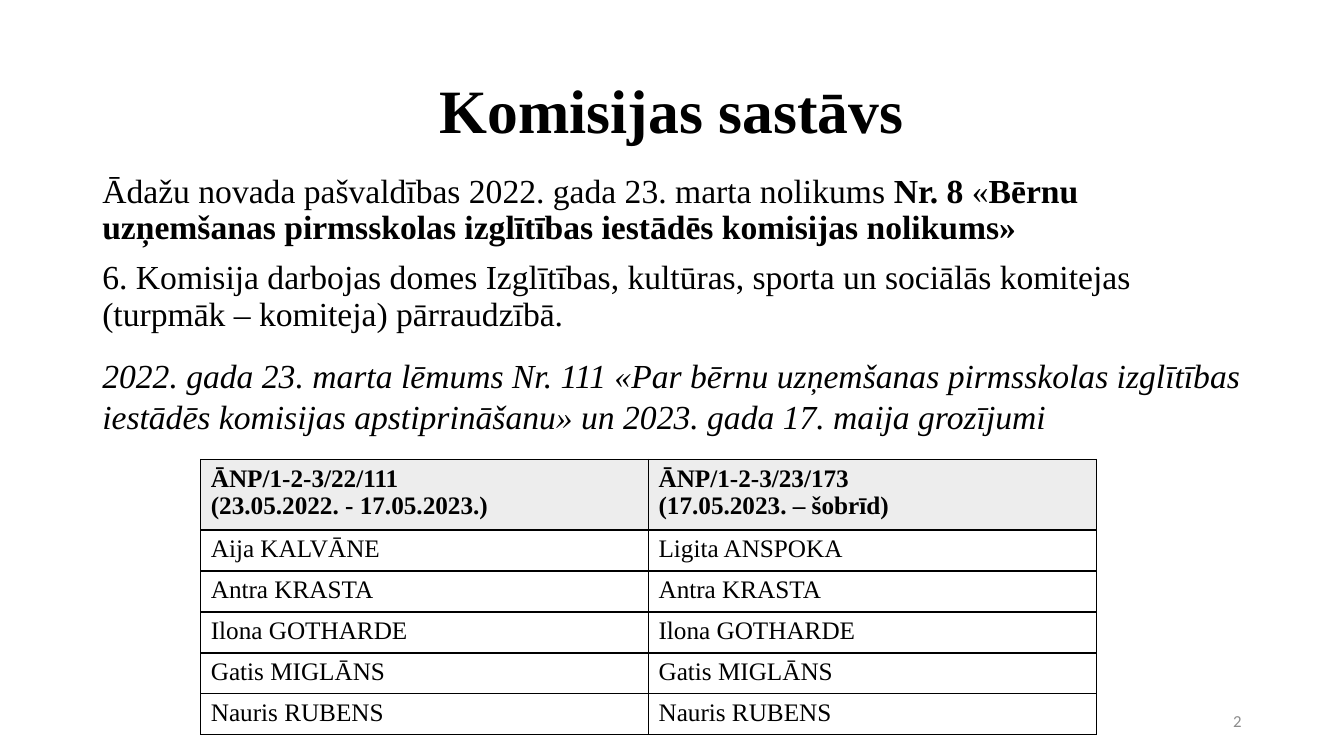
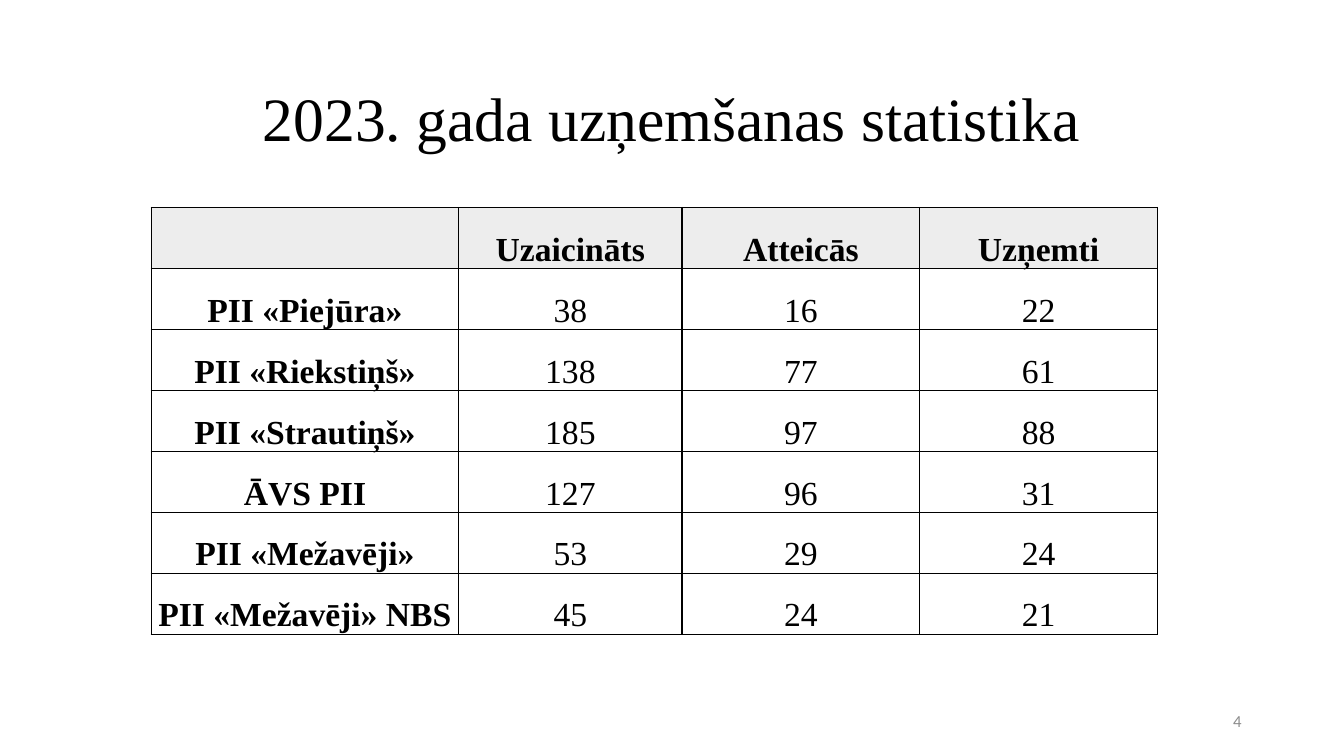
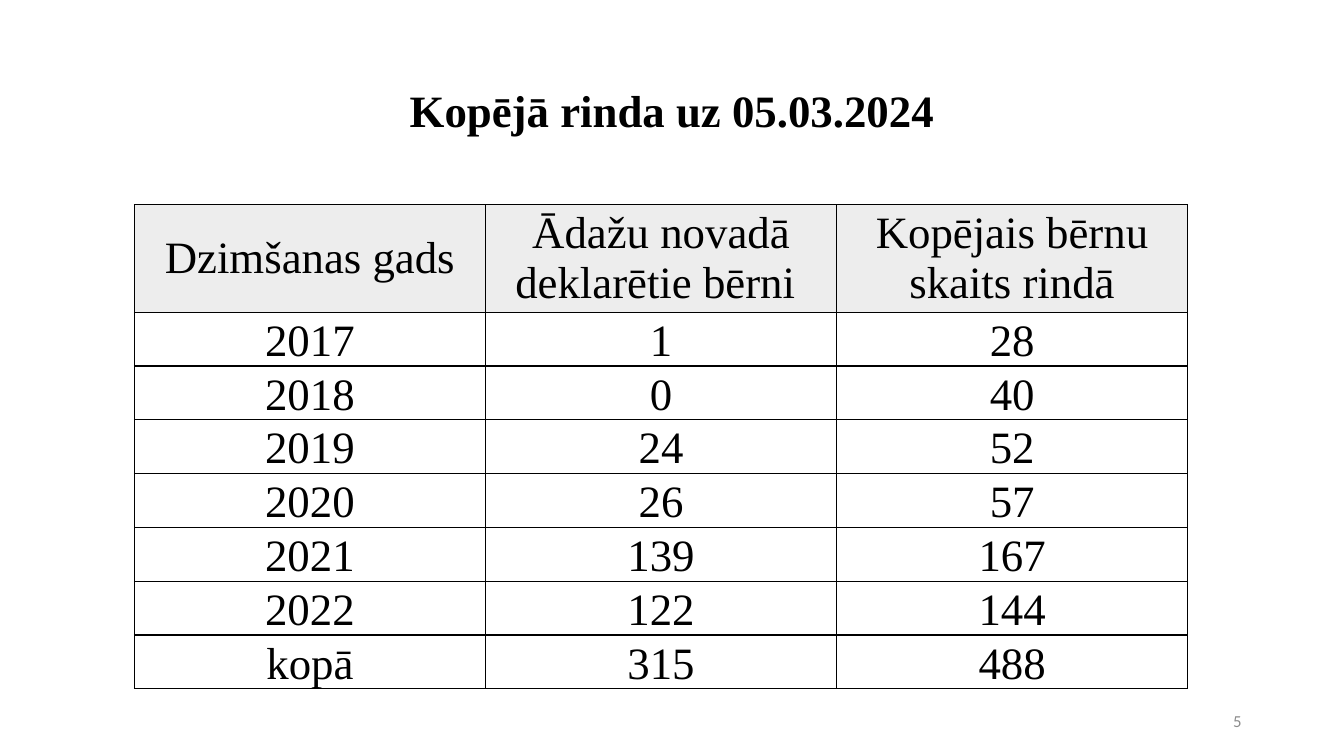
from dataclasses import dataclass

from lxml import etree
from pptx import Presentation
from pptx.dml.color import RGBColor
from pptx.enum.text import MSO_ANCHOR, PP_ALIGN
from pptx.oxml.ns import qn
from pptx.util import Emu, Inches, Pt

LEFT, CENTER, RIGHT = PP_ALIGN.LEFT, PP_ALIGN.CENTER, PP_ALIGN.RIGHT
TOP, MIDDLE, BOTTOM = MSO_ANCHOR.TOP, MSO_ANCHOR.MIDDLE, MSO_ANCHOR.BOTTOM

SLIDE_WIDTH, SLIDE_HEIGHT = Inches(13.33), Inches(7.5)
GRID_COLUMNS, GRID_ROWS = 160, 90


@dataclass(frozen=True)
class Theme:
    font: str = "Times New Roman"
    number_font: str = "Calibri"
    ink: str = "000000"
    number_ink: str = "8C8C8C"
    header_fill: str = "EDEDED"
    title: int = 44
    subtitle: int = 32
    body: int = 24
    small: int = 18
    number: int = 12
    border: float = 1


THEME = Theme()


@dataclass(frozen=True)
class Area:
    column: float
    row: float
    columns: float
    rows: float


@dataclass(frozen=True)
class Style:
    size: int
    bold: bool = False
    italic: bool = False
    font: str = THEME.font
    ink: str = THEME.ink


@dataclass(frozen=True)
class Layout:
    align: PP_ALIGN = LEFT
    anchor: MSO_ANCHOR = TOP
    line_spacing: float = 1.0
    space_before: float = 0


@dataclass(frozen=True)
class Grid:
    column: float
    row: float
    widths: tuple[float, ...]
    header_height: float
    row_height: float
    size: int
    cells: tuple[tuple[str, ...], ...]
    align: PP_ALIGN = CENTER
    anchor: MSO_ANCHOR = BOTTOM
    header_anchor: MSO_ANCHOR = BOTTOM
    bold_header: bool = False
    bold_first_column: bool = False
    inset_x: float = 0.1
    inset_y: float = 0.05


@dataclass(frozen=True)
class Page:
    number: str
    title: str
    title_style: Style
    table: Grid
    title_row: float = 4.8


def across(columns: float) -> Emu:
    return Emu(round(SLIDE_WIDTH * columns / GRID_COLUMNS))


def down(rows: float) -> Emu:
    return Emu(round(SLIDE_HEIGHT * rows / GRID_ROWS))


def format_span(span, style: Style) -> None:
    span.font.name = style.font
    span.font.size = Pt(style.size)
    span.font.bold = style.bold
    span.font.italic = style.italic
    span.font.color.rgb = RGBColor.from_string(style.ink)


def add_text(page, area: Area, paragraphs, layout: Layout) -> None:
    box = page.shapes.add_textbox(across(area.column), down(area.row),
                                  across(area.columns), down(area.rows))
    frame = box.text_frame
    frame.word_wrap = True
    frame.vertical_anchor = layout.anchor
    for index, spans in enumerate(paragraphs):
        para = frame.add_paragraph() if index else frame.paragraphs[0]
        para.alignment = layout.align
        para.line_spacing = layout.line_spacing
        para.space_before = Pt(layout.space_before)
        for text, style in spans:
            span = para.add_run()
            span.text = text
            format_span(span, style)


def add_borders(cell) -> None:
    properties = cell._tc.get_or_add_tcPr()
    for position, side in enumerate(("a:lnL", "a:lnR", "a:lnT", "a:lnB")):
        line = etree.Element(qn(side), w=str(Pt(THEME.border)))
        fill = etree.SubElement(line, qn("a:solidFill"))
        etree.SubElement(fill, qn("a:srgbClr"), val=THEME.ink)
        properties.insert(position, line)


def format_cell(cell, text: str, grid: Grid, is_header: bool, is_first: bool) -> None:
    cell.margin_left = cell.margin_right = Inches(grid.inset_x)
    cell.margin_top = cell.margin_bottom = Inches(grid.inset_y)
    cell.vertical_anchor = grid.header_anchor if is_header else grid.anchor
    if is_header:
        cell.fill.solid()
        cell.fill.fore_color.rgb = RGBColor.from_string(THEME.header_fill)
    else:
        cell.fill.background()
    add_borders(cell)
    bold = grid.bold_header if is_header else grid.bold_first_column and is_first
    cell.text_frame.text = text
    for para in cell.text_frame.paragraphs:
        para.alignment = grid.align
        for span in para.runs:
            format_span(span, Style(grid.size, bold=bold))


def add_grid(page, grid: Grid) -> None:
    row_count = len(grid.cells)
    height = grid.header_height + grid.row_height * (row_count - 1)
    table = page.shapes.add_table(
        row_count, len(grid.widths), across(grid.column), down(grid.row),
        across(sum(grid.widths)), down(height)).table
    for column, width in zip(table.columns, grid.widths):
        column.width = across(width)
    for row_index, texts in enumerate(grid.cells):
        is_header = row_index == 0
        table.rows[row_index].height = down(
            grid.header_height if is_header else grid.row_height)
        for column_index, text in enumerate(texts):
            format_cell(table.cell(row_index, column_index), text, grid,
                        is_header, column_index == 0)


def add_page(deck, content: Page):
    page = deck.slides.add_slide(deck.slide_layouts[6])
    add_text(page, Area(11, content.title_row, 138, 17.4),
             [[(content.title, content.title_style)]],
             Layout(CENTER, MIDDLE, line_spacing=0.9))
    add_grid(page, content.table)
    number_style = Style(THEME.number, font=THEME.number_font, ink=THEME.number_ink)
    add_text(page, Area(113, 83.4, 36, 4.8), [[(content.number, number_style)]],
             Layout(RIGHT, MIDDLE))
    return page


MEMBERS = Page(
    "2", "Komisijas sastāvs", Style(THEME.title, bold=True),
    Grid(23.9, 54.7, (53.3, 53.3), 7.8, 4.88, THEME.small, (
        ("ĀNP/1-2-3/22/111\n(23.05.2022. - 17.05.2023.)",
         "ĀNP/1-2-3/23/173\n(17.05.2023. – šobrīd)"),
        ("Aija KALVĀNE", "Ligita ANSPOKA"),
        ("Antra KRASTA", "Antra KRASTA"),
        ("Ilona GOTHARDE", "Ilona GOTHARDE"),
        ("Gatis MIGLĀNS", "Gatis MIGLĀNS"),
        ("Nauris RUBENS", "Nauris RUBENS"),
    ), align=LEFT, anchor=TOP, header_anchor=TOP, bold_header=True))

ADMISSIONS = Page(
    "4", "2023. gada uzņemšanas statistika", Style(THEME.title),
    Grid(18, 24.7, (36.6, 26.6, 28.3, 28.3), 7.26, 7.26, THEME.body, (
        ("", "Uzaicināts", "Atteicās", "Uzņemti"),
        ("PII «Piejūra»", "38", "16", "22"),
        ("PII «Riekstiņš»", "138", "77", "61"),
        ("PII «Strautiņš»", "185", "97", "88"),
        ("ĀVS PII", "127", "96", "31"),
        ("PII «Mežavēji»", "53", "29", "24"),
        ("PII «Mežavēji» NBS", "45", "24", "21"),
    ), bold_header=True, bold_first_column=True, inset_x=0.01, inset_y=0),
    title_row=5.8)

QUEUE = Page(
    "5", "Kopējā rinda uz 05.03.2024", Style(THEME.subtitle, bold=True),
    Grid(16, 24.36, (41.8, 41.8, 41.8), 11.8, 5.9, THEME.subtitle, (
        ("Dzimšanas gads", "Ādažu novadā deklarētie bērni ",
         "Kopējais bērnu skaits rindā"),
        ("2017", "1", "28"),
        ("2018", "0", "40"),
        ("2019", "24", "52"),
        ("2020", "26", "57"),
        ("2021", "139", "167"),
        ("2022", "122", "144"),
        ("kopā", "315", "488"),
    ), header_anchor=MIDDLE, inset_x=0.07, inset_y=0))


def add_regulation(page) -> None:
    plain = Style(THEME.body)
    strong = Style(THEME.body, bold=True)
    add_text(page, Area(11, 20.16, 138, 20), [
        [("Ādažu novada pašvaldības 2022. gada 23. marta nolikums ", plain),
         ("Nr. 8", strong), (" «", plain),
         ("Bērnu uzņemšanas pirmsskolas izglītības iestādēs komisijas nolikums»",
          strong)],
        [("6. Komisija darbojas domes Izglītības, kultūras, sporta un sociālās "
          "komitejas (turpmāk – komiteja) pārraudzībā.", plain)],
    ], Layout(line_spacing=0.9, space_before=10))


def add_decision(page) -> None:
    add_text(page, Area(11, 41.7, 141.7, 11.1), [
        [("2022. gada 23. marta lēmums Nr. 111 «Par bērnu uzņemšanas pirmsskolas "
          "izglītības iestādēs komisijas apstiprināšanu» un 2023. gada 17. maija "
          "grozījumi", Style(THEME.body, italic=True))],
    ], Layout())


def main() -> None:
    deck = Presentation()
    deck.slide_width, deck.slide_height = SLIDE_WIDTH, SLIDE_HEIGHT
    members_page = add_page(deck, MEMBERS)
    add_regulation(members_page)
    add_decision(members_page)
    add_page(deck, ADMISSIONS)
    add_page(deck, QUEUE)
    deck.save("out.pptx")


if __name__ == "__main__":
    main()
